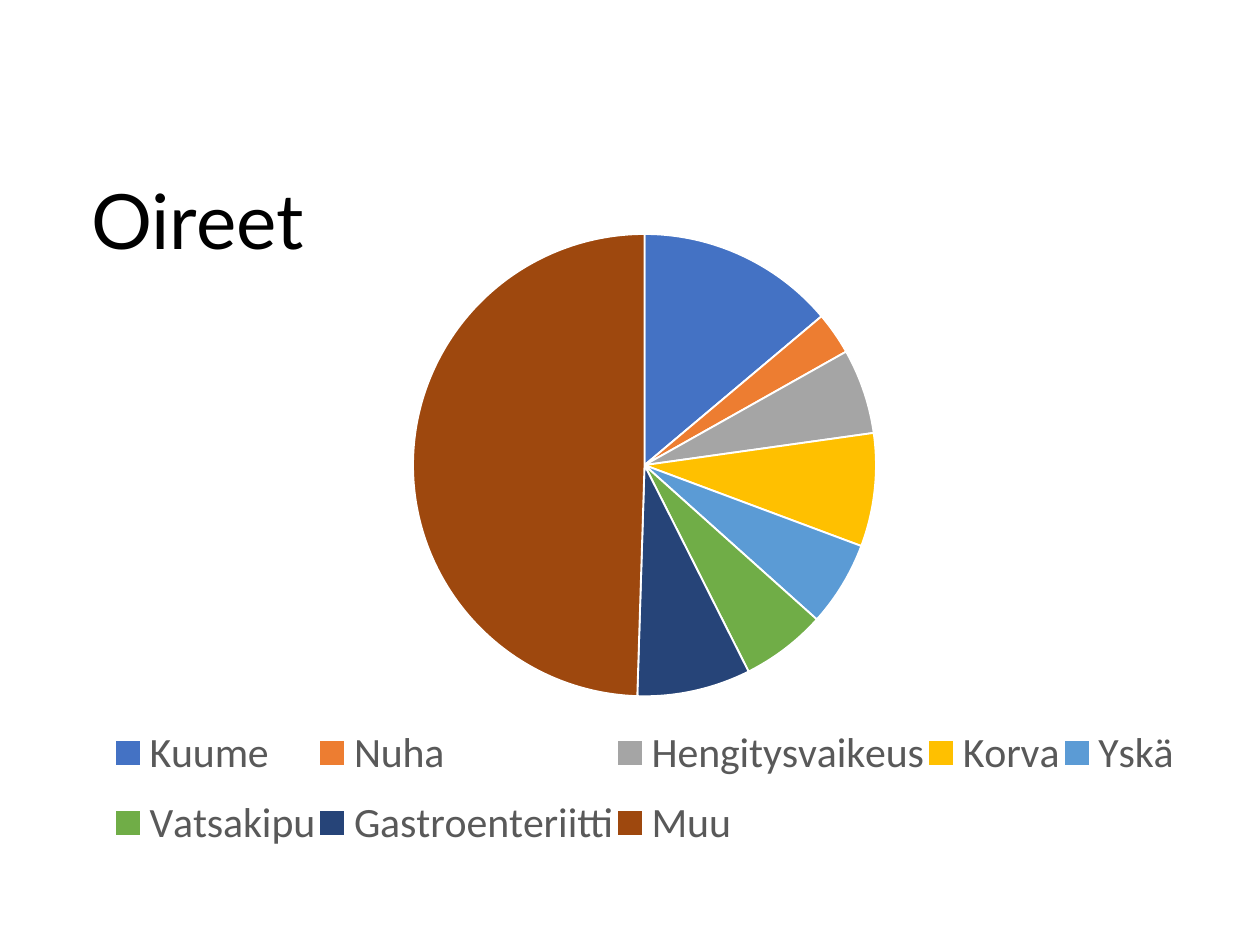
"""Build the symptoms slide: a title and a pie chart with its legend."""
import pptx
import pptx.chart.data
import pptx.dml.color
import pptx.enum.chart
import pptx.enum.text
import pptx.oxml
import pptx.util

Pt = pptx.util.Pt


def color(hex_string):
    return pptx.dml.color.RGBColor.from_string(hex_string)


def manual_layout(target, x, y, width, height):
    return pptx.oxml.parse_xml(
        f'<c:layout {pptx.oxml.ns.nsdecls("c")}><c:manualLayout>{target}'
        '<c:xMode val="edge"/><c:yMode val="edge"/>'
        f'<c:x val="{x}"/><c:y val="{y}"/><c:w val="{width}"/><c:h val="{height}"/>'
        '</c:manualLayout></c:layout>'
    )


symptoms = [
    ("Kuume", 14, "4472C4"),
    ("Nuha", 3, "ED7D31"),
    ("Hengitysvaikeus", 6, "A5A5A5"),
    ("Korva", 8, "FFC000"),
    ("Yskä", 6, "5B9BD5"),
    ("Vatsakipu", 6, "70AD47"),
    ("Gastroenteriitti", 8, "264478"),
    ("Muu", 50, "9E480E"),
]

presentation = pptx.Presentation()
presentation.slide_width = Pt(1024)
presentation.slide_height = Pt(768)
slide = presentation.slides.add_slide(presentation.slide_layouts[6])

title = slide.shapes.add_textbox(Pt(70.5), Pt(126.7), Pt(883.5), Pt(111.6))
frame = title.text_frame
frame.word_wrap = True
frame.vertical_anchor = pptx.enum.text.MSO_ANCHOR.MIDDLE
frame.margin_left = frame.margin_right = Pt(3.6)
frame.margin_top = frame.margin_bottom = Pt(3.6)
paragraph = frame.paragraphs[0]
paragraph.text = "Oireet"
paragraph.line_spacing = 0.9
paragraph.font.name = "Lato"
paragraph.font.size = Pt(62)
paragraph.font.color.rgb = color("000000")

chart_data = pptx.chart.data.CategoryChartData()
chart_data.categories = [name for name, share, fill in symptoms]
chart_data.add_series("Oireet", [share for name, share, fill in symptoms])
chart = slide.shapes.add_chart(
    pptx.enum.chart.XL_CHART_TYPE.PIE,
    Pt(90), Pt(189.4), Pt(867.6), Pt(515.5), chart_data,
).chart
chart.has_title = False
chart.font.name = "Roboto"
chart.font.size = Pt(10)
chart.font.color.rgb = color("000000")

chart.has_legend = True
legend = chart.legend
legend.position = pptx.enum.chart.XL_LEGEND_POSITION.BOTTOM
legend.include_in_layout = True
legend.font.name = "Calibri"
legend.font.size = Pt(34)
legend.font.color.rgb = color("595959")

plot = chart.plots[0]
plot.vary_by_categories = True
for index, (name, share, fill) in enumerate(symptoms):
    point_format = plot.series[0].points[index].format
    point_format.fill.solid()
    point_format.fill.fore_color.rgb = color(fill)
    point_format.line.color.rgb = color("FFFFFF")
    point_format.line.width = Pt(1.5)

qn = pptx.oxml.ns.qn
plot_area = chart.element.find(".//" + qn("c:plotArea"))
legend_element = chart.element.find(".//" + qn("c:legend"))
for parent in (plot_area, legend_element):
    for old_layout in parent.findall(qn("c:layout")):
        parent.remove(old_layout)
plot_area.insert(0, manual_layout('<c:layoutTarget val="inner"/>', 0.28, 0, 0.44, 0.73))
legend_element.find(qn("c:legendPos")).addnext(manual_layout("", 0, 0.75, 1, 0.25))

presentation.save("out.pptx")
